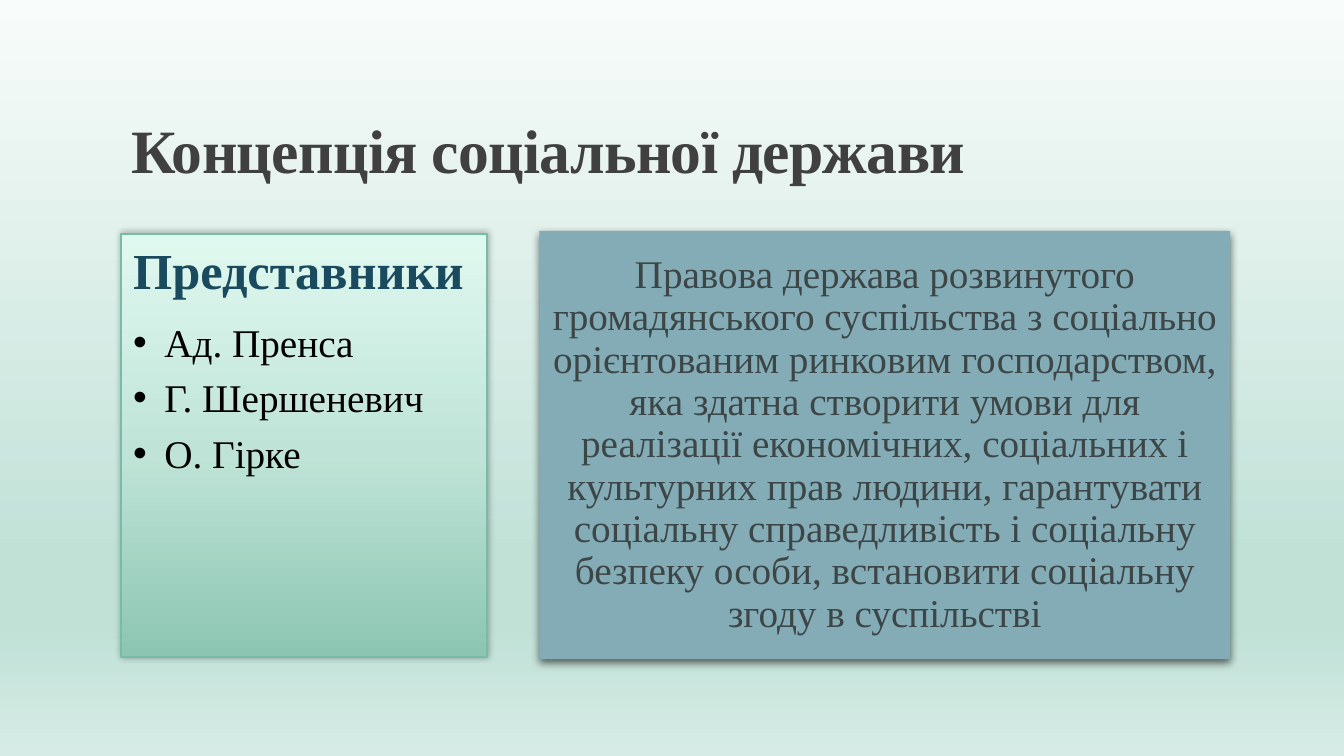
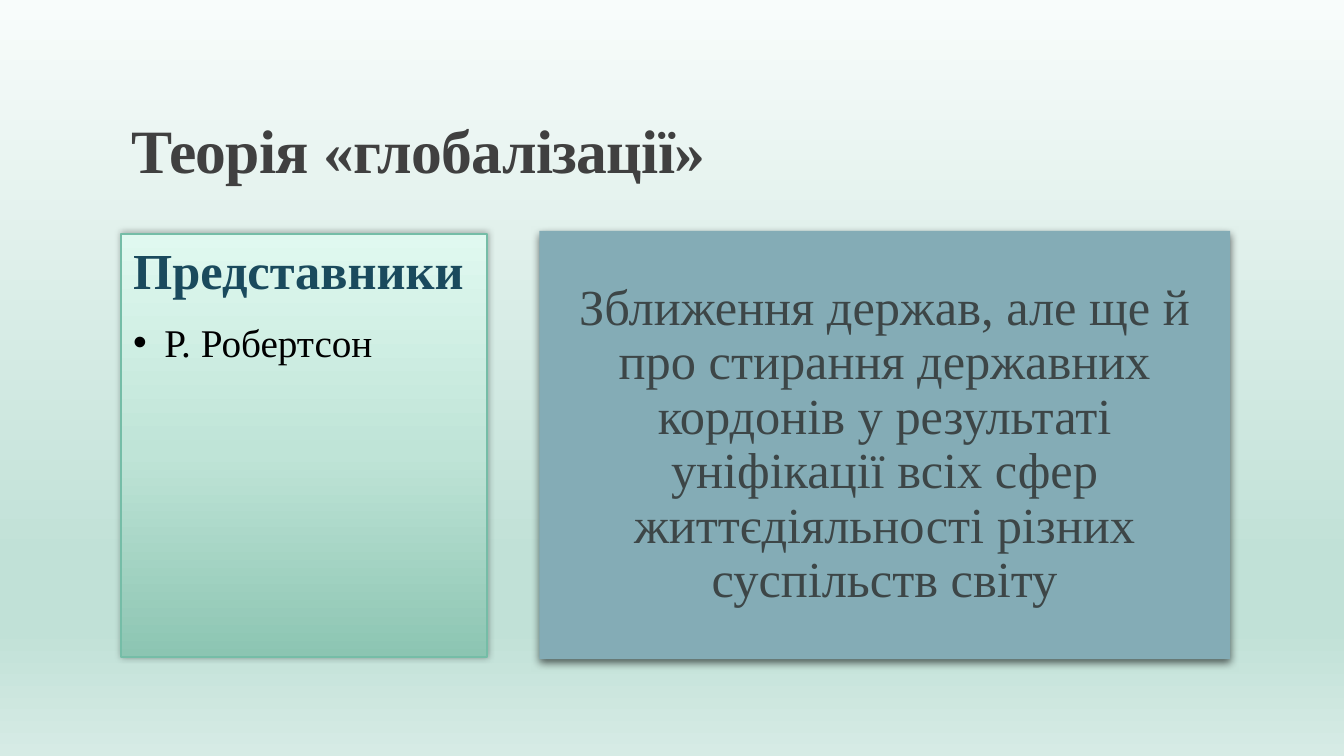
import pptx
import pptx.dml.color
import pptx.enum.text
import pptx.oxml
import pptx.oxml.ns
import pptx.util

Inches = pptx.util.Inches
Pt = pptx.util.Pt
Align = pptx.enum.text.PP_ALIGN
Anchor = pptx.enum.text.MSO_ANCHOR
A_NS = pptx.oxml.ns.nsdecls("a")


class Deck:
    FONT = "Times New Roman"
    COLORS = {
        "title": "404040",
        "heading": "1A4A5D",
        "item": "000000",
        "summary": "3D4647",
        "list_line": "75BDA7",
        "summary_fill": "84ACB6",
        "shadow": "000000",
    }
    BACKGROUND = [(0, "F8FCFB"), (74, "C1E1D7"), (83, "C1E1D7"), (100, "D6EBE5")]
    LIST_FILL = [(0, "8CC5B2"), (48, "BFE4D7"), (100, "E0F9F0")]

    def __init__(self):
        self.prs = pptx.Presentation()
        self.prs.slide_width = Inches(13.33)
        self.prs.slide_height = Inches(7.5)
        self.slide = None
        master = self.prs.slide_master
        self.gradient(master.background.fill, master.element, self.BACKGROUND, 270)

    def color(self, name):
        return pptx.dml.color.RGBColor.from_string(self.COLORS[name])

    def gradient(self, fill, element, stops, angle):
        """Fill with any number of (percent, hex) stops; angle is counter-clockwise."""
        fill.gradient()
        fill.gradient_angle = angle
        stop_list = next(element.iter(pptx.oxml.ns.qn("a:gsLst")))
        for stop in list(stop_list):
            stop_list.remove(stop)
        for percent, color in stops:
            stop_list.append(pptx.oxml.parse_xml(
                f'<a:gs {A_NS} pos="{percent * 1000}"><a:srgbClr val="{color}"/></a:gs>'))

    def shadow(self, sp, alpha, blur, distance, direction):
        sp.shadow.inherit = False
        effects = sp.element.spPr.find(pptx.oxml.ns.qn("a:effectLst"))
        effects.append(pptx.oxml.parse_xml(
            f'<a:outerShdw {A_NS} blurRad="{Pt(blur)}" dist="{Pt(distance)}" '
            f'dir="{direction * 60000}" algn="ctr" rotWithShape="0">'
            f'<a:srgbClr val="{self.COLORS["shadow"]}"><a:alpha val="{alpha * 1000}"/>'
            '</a:srgbClr></a:outerShdw>'))

    def place(self, idx, left, top, width, height, anchor, inset):
        """Move a placeholder and return it with its prepared text frame."""
        sp = self.slide.placeholders[idx]
        sp.left, sp.top = Inches(left), Inches(top)
        sp.width, sp.height = Inches(width), Inches(height)
        tf = sp.text_frame
        tf.word_wrap = True
        tf.auto_size = pptx.enum.text.MSO_AUTO_SIZE.NONE
        tf.vertical_anchor = anchor
        tf.margin_left = tf.margin_right = Inches(inset)
        tf.margin_top = tf.margin_bottom = Inches(inset)
        return sp, tf

    def format(self, p, size, color, bold=False, align=Align.LEFT, line=1.0, after=0,
               bullet=False):
        p.alignment = align
        p.line_spacing = line
        p.space_before, p.space_after = Pt(0), Pt(after)
        indent = Inches(0.31) if bullet else 0
        pPr = p._p.get_or_add_pPr()
        pPr.set("marL", str(indent))
        pPr.set("indent", str(-indent))
        marks = ['buFont typeface="Arial"', 'buChar char="•"'] if bullet else ["buNone"]
        for mark in marks:
            pPr.append(pptx.oxml.parse_xml(f"<a:{mark} {A_NS}/>"))
        for r in p.runs:
            r.font.name = self.FONT
            r.font.size = Pt(size)
            r.font.bold = bold
            r.font.color.rgb = self.color(color)

    def add_slide(self, title):
        layout = self.prs.slide_layouts.get_by_name("Two Content")
        self.slide = self.prs.slides.add_slide(layout)
        sp, tf = self.place(0, 1.2, 0.31, 11, 1.59, Anchor.BOTTOM, 0.1)
        tf.margin_top = tf.margin_bottom = Inches(0.05)
        tf.text = title
        p = tf.paragraphs[0]
        self.format(p, 44, "title", bold=True, line=0.85)
        for r in p.runs:
            r.font._element.set("spc", "-50")

    def add_list(self, heading, items):
        sp, tf = self.place(1, 1.2, 2.32, 3.63, 4.2, Anchor.TOP, 0.12)
        self.gradient(sp.fill, sp.element, self.LIST_FILL, 90)
        sp.line.color.rgb = self.color("list_line")
        sp.line.width = Pt(1)
        self.shadow(sp, 32, 5, 1, 270)
        tf.text = "\n".join([heading, *items])
        first, *rest = tf.paragraphs
        self.format(first, 36, "heading", bold=True, line=0.9, after=12.6)
        for p in rest:
            self.format(p, 28, "item", after=6, bullet=True)

    def add_summary(self, text, size, inset):
        sp, tf = self.place(2, 5.35, 2.29, 6.85, 4.25, Anchor.MIDDLE, inset)
        sp.fill.solid()
        sp.fill.fore_color.rgb = self.color("summary_fill")
        self.shadow(sp, 60, 6, 3, 90)
        tf.text = text
        self.format(tf.paragraphs[0], size, "summary", align=Align.CENTER, line=0.9, after=8)


THEORIES = [
    ("Концепція соціальної держави",
     ["Ад. Пренса", "Г. Шершеневич", "О. Гірке"],
     "Правова держава розвинутого громадянського суспільства з соціально орієнтованим "
     "ринковим господарством, яка здатна створити умови для реалізації економічних, "
     "соціальних і культурних прав людини, гарантувати соціальну справедливість і "
     "соціальну безпеку особи, встановити соціальну згоду в суспільстві",
     28, 0.12),
    ("Теорія «глобалізації»",
     ["Р. Робертсон"],
     "Зближення держав, але ще й про стирання державних кордонів у результаті уніфікації "
     "всіх сфер життєдіяльності різних суспільств світу",
     36, 0.15),
]


def main():
    deck = Deck()
    for title, authors, summary, size, inset in THEORIES:
        deck.add_slide(title)
        deck.add_list("Представники", authors)
        deck.add_summary(summary, size, inset)
    deck.prs.save("out.pptx")


if __name__ == "__main__":
    main()
